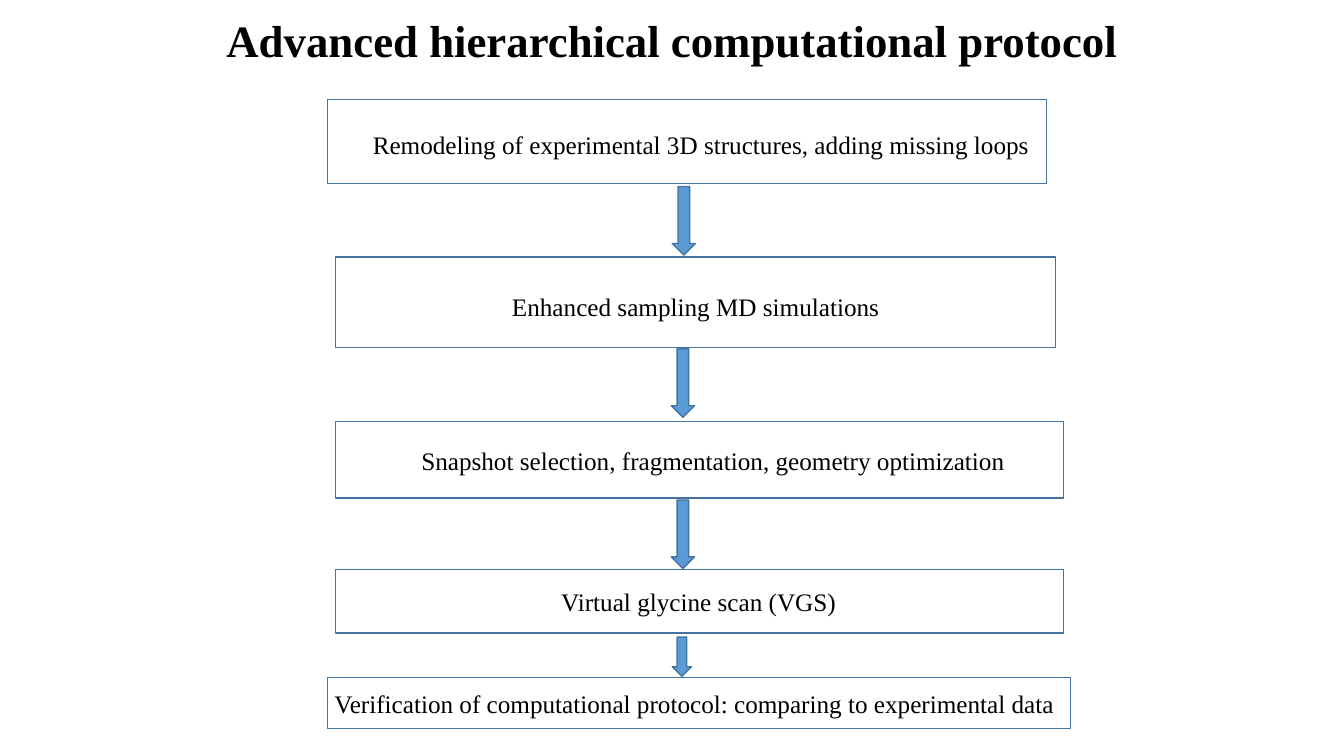
from pptx import Presentation
from pptx.dml.color import RGBColor
from pptx.enum.shapes import MSO_SHAPE
from pptx.enum.text import MSO_ANCHOR, MSO_AUTO_SIZE, PP_ALIGN
from pptx.util import Pt


def color(hex_code):
    return RGBColor.from_string(hex_code)


def write(shape, text, size=18, bold=False, align=PP_ALIGN.LEFT, spacing=1.0):
    paragraph = shape.text_frame.paragraphs[0]
    paragraph.alignment = align
    paragraph.line_spacing = spacing
    run = paragraph.add_run()
    run.text = text
    run.font.name = ProtocolSlide.FONT
    run.font.size = Pt(size)
    run.font.bold = bold
    run.font.color.rgb = color(ProtocolSlide.TEXT)


class ProtocolSlide:
    FONT = "Times New Roman"
    TEXT = "000000"
    LINE = "43739E"
    ARROW = "5B9BD5"

    def __init__(self, presentation):
        self.slide = presentation.slides.add_slide(presentation.slide_layouts[6])

    def shape(self, kind, left, top, width, height, fill=None):
        shape = self.slide.shapes.add_shape(
            kind, Pt(left), Pt(top), Pt(width), Pt(height))
        shape.shadow.inherit = False
        if fill:
            shape.fill.solid()
            shape.fill.fore_color.rgb = color(fill)
        else:
            shape.fill.background()
        shape.line.color.rgb = color(self.LINE)
        shape.line.width = Pt(1)

    def box(self, left, top, width, height):
        self.shape(MSO_SHAPE.RECTANGLE, left, top, width, height)

    def arrow(self, left, top, width, height):
        self.shape(MSO_SHAPE.DOWN_ARROW, left, top, width, height, self.ARROW)

    def title(self, text, left, top, width, height):
        shape = self.slide.shapes.add_textbox(Pt(left), Pt(top), Pt(width), Pt(height))
        shape.text_frame.word_wrap = True
        shape.text_frame.vertical_anchor = MSO_ANCHOR.MIDDLE
        write(shape, text, size=32, bold=True, align=PP_ALIGN.CENTER, spacing=0.9)

    def label(self, text, left, top, width, height=29):
        shape = self.slide.shapes.add_textbox(Pt(left), Pt(top), Pt(width), Pt(height))
        shape.text_frame.word_wrap = False
        shape.text_frame.auto_size = MSO_AUTO_SIZE.SHAPE_TO_FIT_TEXT
        write(shape, text)


# Each step: wording, label (left, top, width), box (left, top, width, height)
STEPS = [
    ("Remodeling of experimental 3D structures, adding missing loops",
     (259.2, 88.6, 495.4), (234, 71.3, 513.4, 59.8)),
    ("Enhanced sampling MD simulations",
     (358.6, 204.5, 277.2), (239.8, 183.6, 514, 64.8)),
    ("Snapshot selection, fragmentation, geometry optimization",
     (293.8, 314.6, 445), (239.8, 303.2 - 2.2, 519.8, 54.7)),
    ("Virtual glycine scan (VGS)",
     (393.8, 415.4, 217.4), (239.8, 406.8, 519.8, 45.4)),
    ("Verification of computational protocol: comparing to experimental data",
     (231.8, 488.2, 545.8), (234, 483.8, 530.6, 36.7)),
]

# Arrows between steps: left, top, width, height
ARROWS = [
    (480.2, 133.2, 16.6, 49),
    (479.5, 249.1, 16.6, 49),
    (479.5, 357.1, 16.6, 49),
    (480.2, 455, 13.7, 28.1),
]


def main():
    presentation = Presentation()
    presentation.slide_width = Pt(960)
    presentation.slide_height = Pt(540)
    protocol = ProtocolSlide(presentation)

    # Heading
    protocol.title("Advanced hierarchical computational protocol", 66.2, 7.2, 828, 47.5)

    # Steps from top to bottom
    for text, label, box in STEPS:
        protocol.box(*box)
        protocol.label(text, *label)

    # Flow between the steps
    for arrow in ARROWS:
        protocol.arrow(*arrow)

    presentation.save("out.pptx")


if __name__ == "__main__":
    main()
